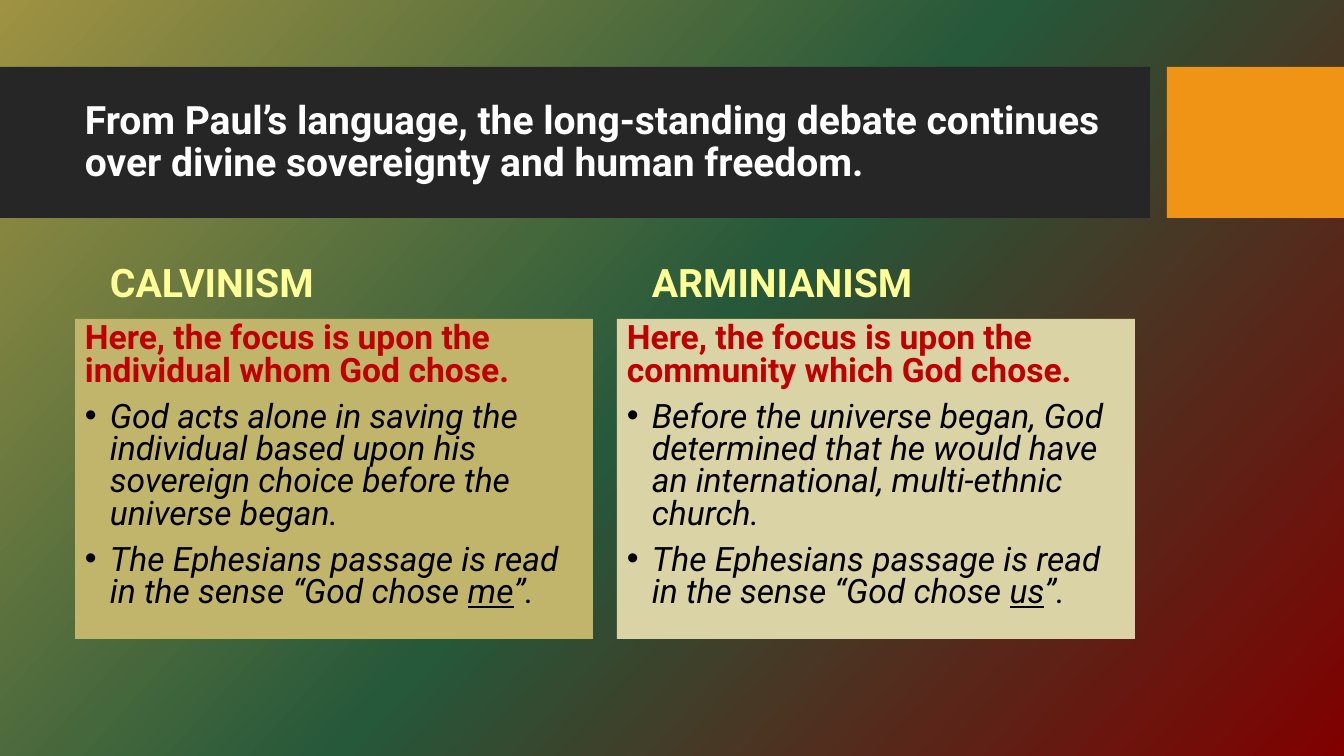
from copy import deepcopy

from lxml.etree import SubElement
from pptx import Presentation
from pptx.dml.color import RGBColor
from pptx.enum.shapes import MSO_SHAPE as Shape
from pptx.enum.text import MSO_ANCHOR as Anchor, PP_ALIGN as Align
from pptx.oxml.ns import qn
from pptx.util import Emu, Pt

BLACK = RGBColor(0x00, 0x00, 0x00)
WHITE = RGBColor(0xFF, 0xFF, 0xFF)
CHARCOAL = RGBColor(0x26, 0x26, 0x26)
ORANGE = RGBColor(0xF0, 0x94, 0x15)
PALE_YELLOW = RGBColor(0xFF, 0xFF, 0x99)
RED = RGBColor(0xC0, 0x00, 0x00)
SAND = RGBColor(0xC1, 0xB5, 0x6B)
CREAM = RGBColor(0xDA, 0xD3, 0xA6)
BACKDROP = [
    (0, RGBColor(0x9F, 0x92, 0x42)),
    (0.5, RGBColor(0x26, 0x58, 0x3A)),
    (1, RGBColor(0x80, 0x00, 0x00)),
]

TITLE = {"size": Pt(27.9), "bold": True, "color": WHITE}
HEADING = {"size": Pt(28), "bold": True, "color": PALE_YELLOW}
FOCUS = {"size": Pt(24), "bold": True, "color": RED}
POINT = {"size": Pt(24), "italic": True, "color": BLACK}
STRESSED = {**POINT, "underline": True}

PASSAGE = "The Ephesians passage is read in the sense “God chose "
VIEWS = [
    ("CALVINISM", SAND, "Here, the focus is upon the individual whom God chose.",
     "God acts alone in saving the individual based upon his sovereign choice "
     "before the universe began.", "me"),
    ("ARMINIANISM", CREAM, "Here, the focus is upon the community which God chose.",
     "Before the universe began, God determined that he would have an "
     "international, multi-ethnic church.", "us"),
]


def px(count):
    """Turn whole pixels into EMU."""
    return Emu(round(count * 914400 / 100.8))


def add_block(page, left, top, width, height, color):
    """Add a plain filled rectangle."""
    block = page.shapes.add_shape(
        Shape.RECTANGLE, px(left), px(top), px(width), px(height))
    block.shadow.inherit = False
    block.fill.solid()
    block.fill.fore_color.rgb = color
    block.line.fill.background()
    return block


def add_label(page, left, top, width, height, text, style, anchor):
    """Add a text box holding one paragraph."""
    box = page.shapes.add_textbox(px(left), px(top), px(width), px(height))
    write(box, [[(text, style)]], 0.9, anchor)


def write(box, paragraphs, line_spacing, anchor):
    """Fill a box with paragraphs of styled spans, bulleting those after the first."""
    frame = box.text_frame
    frame.word_wrap = True
    frame.vertical_anchor = anchor
    for index, spans in enumerate(paragraphs):
        para = frame.add_paragraph() if index else frame.paragraphs[0]
        para.alignment = Align.LEFT
        para.line_spacing = line_spacing
        if index:
            para.space_before = Pt(10)
            add_bullet(para)
        for text, style in spans:
            span = para.add_run()
            span.text = text
            span.font.name = "Roboto"
            for name, value in style.items():
                if name == "color":
                    span.font.color.rgb = value
                else:
                    setattr(span.font, name, value)


def add_bullet(para):
    """Give a paragraph a hanging round bullet."""
    properties = para._p.get_or_add_pPr()
    properties.set("marL", str(px(25)))
    properties.set("indent", str(-px(25)))
    SubElement(properties, qn("a:buFont")).set("typeface", "Arial")
    SubElement(properties, qn("a:buChar")).set("char", "•")


def paint_backdrop(page):
    """Paint the diagonal three-colour background."""
    fill = page.background.fill
    fill.gradient()
    fill.gradient_angle = 318
    stop_list = page.element.find(".//" + qn("a:gsLst"))
    stop_list.append(deepcopy(stop_list[-1]))
    for stop, (position, color) in zip(fill.gradient_stops, BACKDROP):
        stop.position = position
        stop.color.rgb = color


def add_title_band(page, top, height):
    """Add the dark title band and its orange end block."""
    add_block(page, 0, top, 1150, height, CHARCOAL)
    add_block(page, 1167, top, 177, height, ORANGE)
    add_label(page, 75, top + 16, 1059, height - 32,
              "From Paul’s language, the long-standing debate continues "
              "over divine sovereignty and human freedom.", TITLE, Anchor.MIDDLE)


def add_view(page, left, top, width, view):
    """Add one column: a heading above a panel of points."""
    heading, color, focus, belief, chosen = view
    add_label(page, left + 25, top, width - 25, 76, heading, HEADING, Anchor.BOTTOM)
    panel = add_block(page, left, top + 84, width, 320, color)
    write(panel, [
        [(focus, FOCUS)],
        [(belief, POINT)],
        [(PASSAGE, POINT), (chosen, STRESSED), ("”.", POINT)],
    ], 0.8, Anchor.TOP)


def main():
    """Build and save the slide."""
    deck = Presentation()
    deck.slide_width, deck.slide_height = px(1344), px(756)
    page = deck.slides.add_slide(deck.slide_layouts[6])
    paint_backdrop(page)
    add_title_band(page, 67, 151)
    for column, view in enumerate(VIEWS):
        add_view(page, 75 + column * 542, 235, 518, view)
    deck.save("out.pptx")


if __name__ == "__main__":
    main()
